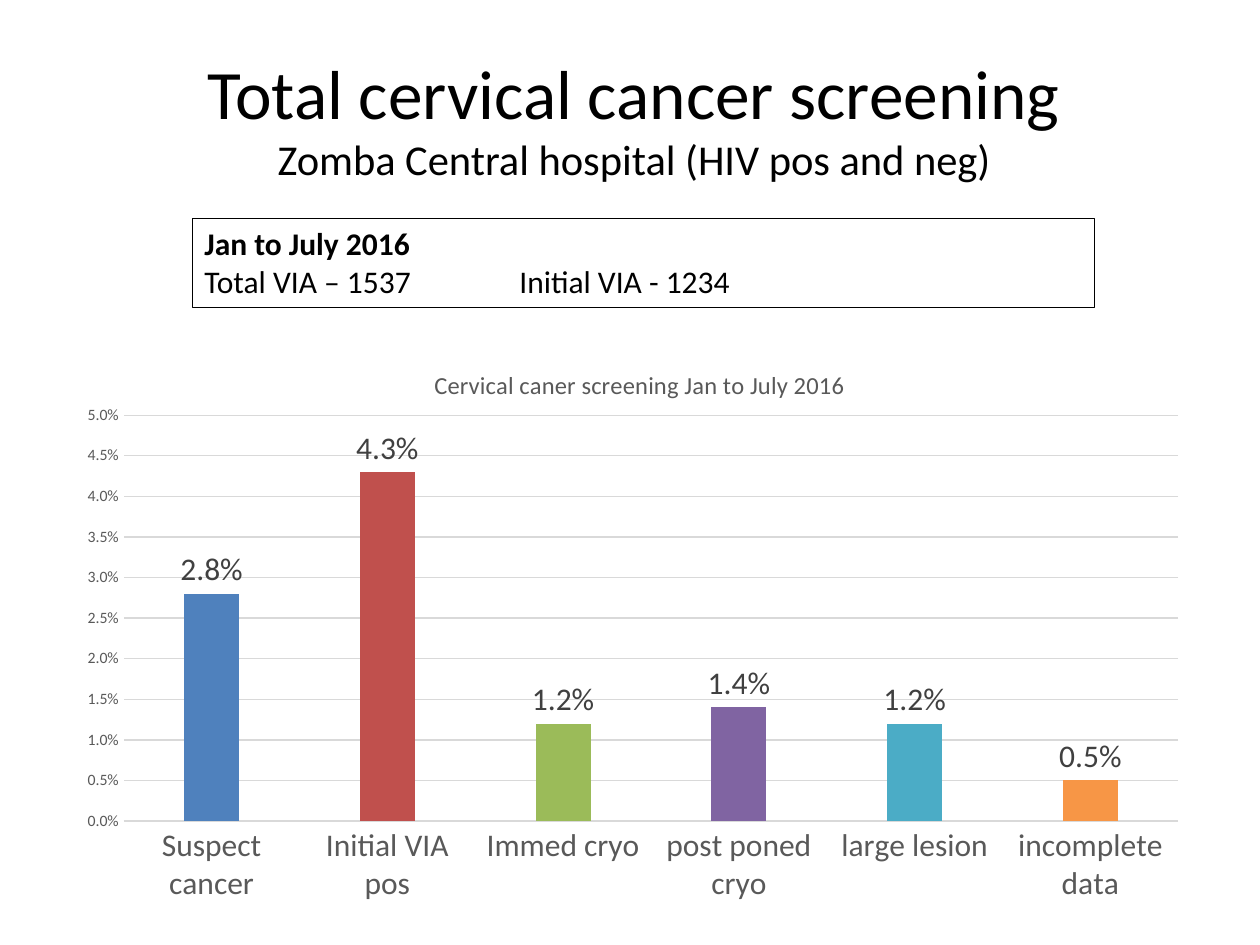
from lxml import etree
from pptx import Presentation
from pptx.chart.data import CategoryChartData
from pptx.dml.color import RGBColor
from pptx.enum.chart import XL_CHART_TYPE, XL_LABEL_POSITION, XL_TICK_MARK
from pptx.enum.text import MSO_ANCHOR, PP_ALIGN
from pptx.oxml import parse_xml
from pptx.oxml.ns import nsdecls, qn
from pptx.util import Pt

COLUMNS = XL_CHART_TYPE.COLUMN_CLUSTERED
OUTSIDE_END = XL_LABEL_POSITION.OUTSIDE_END
NO_TICK = XL_TICK_MARK.NONE
MIDDLE = MSO_ANCHOR.MIDDLE
CENTER, LEFT = PP_ALIGN.CENTER, PP_ALIGN.LEFT

FONT = "Calibri"
BLACK, GREY, DARK_GREY, GRID = "000000", "595959", "404040", "D9D9D9"
PERCENT = "0.0%"
RESULTS = [
    ("Suspect cancer", 0.028, "4F81BD"),
    ("Initial VIA pos", 0.043, "C0504D"),
    ("Immed cryo", 0.012, "9BBB59"),
    ("post poned cryo", 0.014, "8064A2"),
    ("large lesion", 0.012, "4BACC6"),
    ("incomplete data", 0.005, "F79646"),
]


def px(n):
    return round(n * 914400 / 126)


def rgb(color):
    return RGBColor.from_string(color)


def style_font(font, size, color=BLACK, bold=False):
    font.name, font.size, font.bold = FONT, Pt(size), bold
    font.color.rgb = rgb(color)


def add_run(p, text, size, bold=False):
    r = p.add_run()
    r.text = text
    style_font(r.font, size, bold=bold)


def style_line(line, color, width):
    line.color.rgb = rgb(color)
    line.width = Pt(width)


def add_title(slide, x, y, w, h):
    tf = slide.shapes.add_textbox(px(x), px(y), px(w), px(h)).text_frame
    tf.word_wrap = True
    tf.vertical_anchor = MIDDLE
    p = tf.paragraphs[0]
    p.alignment = CENTER
    add_run(p, "Total cervical cancer screening", 39.6)
    p.add_line_break()
    add_run(p, "Zomba Central hospital (HIV pos and neg)", 24.3)


def add_totals(slide, x, y, w, h):
    box = slide.shapes.add_textbox(px(x), px(y), px(w), px(h))
    style_line(box.line, BLACK, 0.25)
    tf = box.text_frame
    tf.word_wrap = True
    period, totals = tf.paragraphs[0], tf.add_paragraph()
    period.alignment = totals.alignment = LEFT
    add_run(period, "Jan to July 2016", 18, bold=True)
    tabs = etree.SubElement(totals._p.get_or_add_pPr(), qn("a:tabLst"))
    etree.SubElement(tabs, qn("a:tab"), pos=str(px(315)), algn="l")
    add_run(totals, "Total VIA – 1537\tInitial VIA - 1234", 18)


def set_layout(element, after, **fractions):
    """Place a chart part by fractions of the chart area."""
    for old in element.findall(qn("c:layout")):
        element.remove(old)
    target = '<c:layoutTarget val="inner"/>' if "w" in fractions else ""
    modes = '<c:xMode val="edge"/><c:yMode val="edge"/>'
    values = "".join(f'<c:{k} val="{v}"/>' for k, v in fractions.items())
    layout = parse_xml(f'<c:layout {nsdecls("c")}><c:manualLayout>{target}{modes}'
                       f'{values}</c:manualLayout></c:layout>')
    previous = element.find(qn(after)) if after else None
    element.insert(0 if previous is None else element.index(previous) + 1, layout)


def style_axis(axis, size):
    axis.major_tick_mark = axis.minor_tick_mark = NO_TICK
    style_font(axis.tick_labels.font, size, GREY)


def add_results_chart(slide, x, y, w, h):
    data = CategoryChartData(number_format=PERCENT)
    data.categories = [name for name, _, _ in RESULTS]
    data.add_series("Series 1", [value for _, value, _ in RESULTS])
    chart = slide.shapes.add_chart(COLUMNS, px(x), px(y), px(w), px(h), data).chart
    style_font(chart.font, 10)
    chart.has_legend = False

    chart.has_title = True
    title = chart.chart_title
    r = title.text_frame.paragraphs[0].add_run()
    r.text = "Cervical caner screening Jan to July 2016"
    style_font(r.font, 14, GREY)
    title.include_in_layout = False
    set_layout(title._element, "c:tx", x=0.32, y=0.05)

    categories, values = chart.category_axis, chart.value_axis
    style_axis(categories, 18)
    style_line(categories.format.line, GRID, 0.75)
    style_axis(values, 9)
    values.format.line.fill.background()
    values.minimum_scale, values.maximum_scale, values.major_unit = 0, 0.05, 0.005
    values.tick_labels.number_format = PERCENT
    values.tick_labels.number_format_is_linked = False
    style_line(values.major_gridlines.format.line, GRID, 0.75)

    plot = chart.plots[0]
    plot.gap_width, plot.overlap = 219, -27
    plot.vary_by_categories = False
    set_layout(plot._element.getparent(), None, x=0.05, y=0.14, w=0.93, h=0.7)
    series = plot.series[0]
    for i, (_, _, color) in enumerate(RESULTS):
        fill = series.points[i].format.fill
        fill.solid()
        fill.fore_color.rgb = rgb(color)
    labels = series.data_labels
    labels.show_value = True
    labels.position = OUTSIDE_END
    labels.number_format, labels.number_format_is_linked = PERCENT, False
    style_font(labels.font, 18, DARK_GREY)


def main():
    prs = Presentation()
    prs.slide_width, prs.slide_height = px(1260), px(945)
    slide = prs.slides.add_slide(prs.slide_layouts[6])
    add_title(slide, 67, 38, 1134, 158)
    add_totals(slide, 192, 218, 902, 89)
    add_results_chart(slide, 67, 334, 1134, 580)
    prs.save("out.pptx")


if __name__ == "__main__":
    main()
